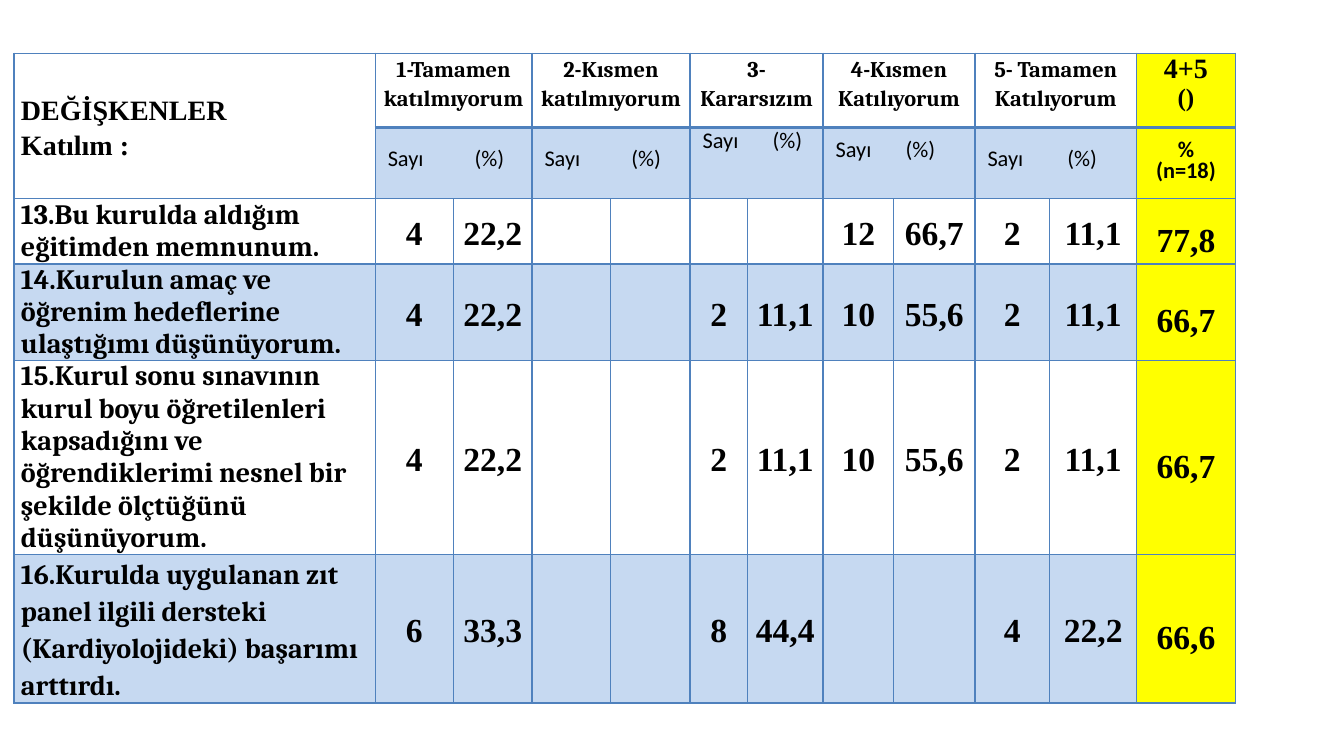
from pptx import Presentation
from pptx.util import Pt
from pptx.dml.color import RGBColor
from pptx.enum.text import PP_ALIGN as Align, MSO_ANCHOR as Anchor
from pptx.oxml.ns import qn
from lxml.etree import SubElement as Sub

# Content
TITLE = ["DEĞİŞKENLER", "Katılım :"]
# heading, tab stop of the percent sign, space kept free below
GROUPS = [
    ("1-Tamamen katılmıyorum", 62, 0),
    ("2-Kısmen katılmıyorum", 62, 0),
    ("3-Kararsızım", 50, 26),
    ("4-Kısmen Katılıyorum", 50, 13),
    ("5- Tamamen Katılıyorum", 57, 0),
]
ITEMS = [
    ("13.Bu kurulda aldığım eğitimden memnunum.",
     ["4", "22,2", "", "", "", "", "12", "66,7", "2", "11,1", "77,8"]),
    ("14.Kurulun amaç ve öğrenim hedeflerine ulaştığımı düşünüyorum.",
     ["4", "22,2", "", "", "2", "11,1", "10", "55,6", "2", "11,1", "66,7"]),
    ("15.Kurul sonu sınavının kurul boyu öğretilenleri kapsadığını ve "
     "öğrendiklerimi nesnel bir şekilde ölçtüğünü düşünüyorum.",
     ["4", "22,2", "", "", "2", "11,1", "10", "55,6", "2", "11,1", "66,7"]),
    ("16.Kurulda uygulanan zıt panel ilgili dersteki (Kardiyolojideki) "
     "başarımı arttırdı.",
     ["6", "33,3", "", "", "8", "44,4", "", "", "4", "22,2", "66,6"]),
]
COLS = [258, 56, 56, 56, 57, 41, 54, 50.5, 58, 53.5, 62, 70.5]
ROWS = [53, 50.5, 46.5, 69, 138.5, 105.5]
LAST = len(COLS) - 1
BLUE, PALE, GOLD = "4F81BD", "C6D9F1", "FFFF00"
ROMAN, SERIF, SANS = "Times New Roman", "Cambria", "Calibri"


def color(code):
    return RGBColor.from_string(code)


def write(cell, lines, size=24, font=ROMAN, bold=True, align=Align.CENTER,
          space=1.15, anchor=Anchor.MIDDLE, left=5, below=0, tab=None):
    """Fill a cell with lines; size may be one number or one per line."""
    cell.margin_left, cell.margin_right = Pt(left), Pt(5)
    cell.margin_top, cell.margin_bottom = Pt(0), Pt(below)
    cell.vertical_anchor = anchor
    frame = cell.text_frame
    sizes = size if isinstance(size, list) else [size] * len(lines)
    for n, (line, high) in enumerate(zip(lines, sizes)):
        para = frame.add_paragraph() if n else frame.paragraphs[0]
        para.alignment, para.line_spacing = align, space
        if tab:
            stops = Sub(para._p.get_or_add_pPr(), qn("a:tabLst"))
            Sub(stops, qn("a:tab"), pos=str(Pt(tab)), algn="l")
        run = para.add_run()
        run.text = line
        run.font.size, run.font.name, run.font.bold = Pt(high), font, bold
        run.font.color.rgb = color("000000")


def border(cell, **wide):
    """Draw the four sides, 1 pt unless a side says otherwise."""
    props = cell._tc.get_or_add_tcPr()
    for side in "LRTB":
        line = Sub(props, qn("a:ln" + side), w=str(Pt(wide.get(side, 1))))
        Sub(Sub(line, qn("a:solidFill")), qn("a:srgbClr"), val=BLUE)


# Slide and table
deck = Presentation()
deck.slide_width, deck.slide_height = Pt(960), Pt(540)
slide = deck.slides.add_slide(deck.slide_layouts[6])
table = slide.shapes.add_table(len(ROWS), len(COLS), Pt(10), Pt(38),
                               Pt(sum(COLS)), Pt(sum(ROWS))).table
table.first_row = table.horz_banding = False
for col, wide in zip(table.columns, COLS):
    col.width = Pt(wide)
for row, high in zip(table.rows, ROWS):
    row.height = Pt(high)

# Borders and fills
for r in range(len(ROWS)):
    for c in range(len(COLS)):
        cell = table.cell(r, c)
        thick = {0: {"B": 2.25}, 1: {"T": 2.25}}.get(r, {}) if c else {}
        border(cell, **thick)
        if c == LAST or (r % 2 and (c or r > 1)):
            cell.fill.solid()
            cell.fill.fore_color.rgb = color(GOLD if c == LAST else PALE)
        else:
            cell.fill.background()

# Header rows
table.cell(0, 0).merge(table.cell(1, 0))
write(table.cell(0, 0), TITLE, size=20, align=Align.LEFT)
for n, (name, tab, below) in enumerate(GROUPS):
    c = 1 + 2 * n
    for r in (0, 1):
        table.cell(r, c).merge(table.cell(r, c + 1))
    write(table.cell(0, c), [name], size=16, font=SERIF, anchor=Anchor.TOP)
    write(table.cell(1, c), ["Sayı\t(%)"], size=16, font=SANS, bold=False,
          align=Align.LEFT, space=Pt(13), left=9, below=below, tab=tab)
write(table.cell(0, LAST), ["4+5", "()"], size=[20, 18], space=1.0,
      anchor=Anchor.TOP)
write(table.cell(1, LAST), ["%", "(n=18)"], size=16, font=SANS, space=Pt(15))

# Item rows
for r, (text, values) in enumerate(ITEMS, 2):
    write(table.cell(r, 0), [text], size=20, font=SERIF, align=Align.LEFT,
          space=1.15 if r == len(ROWS) - 1 else 1.0, anchor=Anchor.TOP)
    for c, value in enumerate(values, 1):
        if value:
            write(table.cell(r, c), [value], space=1.5 if c == LAST else 1.15)

deck.save("out.pptx")
